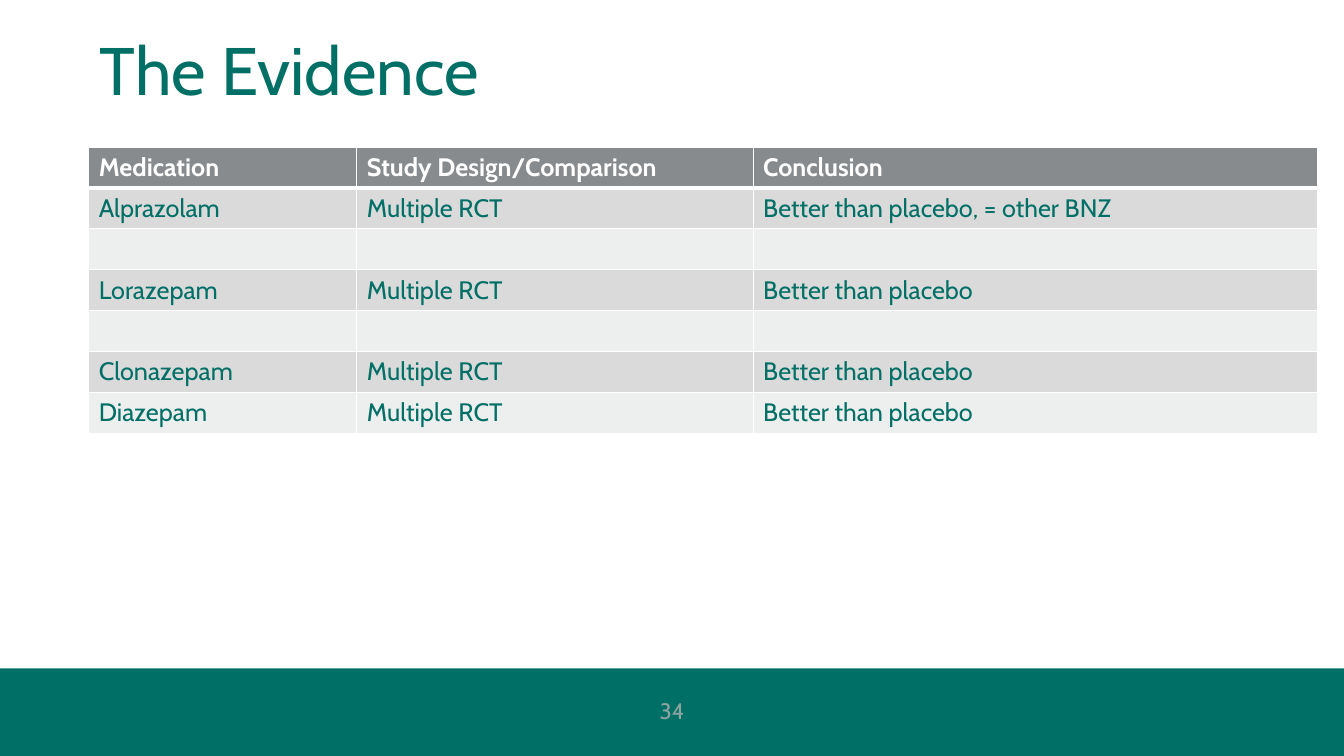
from lxml import etree
from pptx import Presentation
from pptx.dml.color import RGBColor
from pptx.enum.shapes import MSO_SHAPE
from pptx.enum.text import MSO_ANCHOR, PP_ALIGN
from pptx.oxml.ns import qn
from pptx.util import Inches, Pt

FONT = "Cabin"
TEAL = RGBColor(0x00, 0x6F, 0x66)
GRAY_TEAL = RGBColor(0x8C, 0xA4, 0xA0)
HEADER_GRAY = RGBColor(0x88, 0x8B, 0x8D)
DARK_BAND = RGBColor(0xDA, 0xDA, 0xDB)
LIGHT_BAND = RGBColor(0xED, 0xEE, 0xEE)
WHITE = RGBColor(0xFF, 0xFF, 0xFF)

COLUMN_WIDTHS = (2.66, 3.93, 5.6)
EMPTY_ROW = ("", "", "")
EVIDENCE = [
    ("Medication", "Study Design/Comparison", "Conclusion"),
    ("Alprazolam", "Multiple RCT", "Better than placebo, = other BNZ"),
    EMPTY_ROW,
    ("Lorazepam", "Multiple RCT", "Better than placebo"),
    EMPTY_ROW,
    ("Clonazepam", "Multiple RCT", "Better than placebo"),
    ("Diazepam", "Multiple RCT", "Better than placebo"),
]


def write(text_frame, text, size, color, bold=False, align=PP_ALIGN.LEFT):
    text_frame.text = text
    paragraph = text_frame.paragraphs[0]
    paragraph.alignment = align
    for run in paragraph.runs:
        font = run.font
        font.name, font.size, font.bold = FONT, Pt(size), bold
        font.color.rgb = color


def add_title(slide, left, top, width, height):
    title = slide.shapes.title
    title.left, title.top = Inches(left), Inches(top)
    title.width, title.height = Inches(width), Inches(height)
    title.text_frame.vertical_anchor = MSO_ANCHOR.TOP
    write(title.text_frame, "The\u00a0Evidence".replace("\u00a0", " "), 48, TEAL)


def add_footer(slide, left, top, width, height):
    band = slide.shapes.add_shape(
        MSO_SHAPE.RECTANGLE, Inches(left), Inches(top), Inches(width), Inches(height))
    band.shadow.inherit = False
    band.fill.solid()
    band.fill.fore_color.rgb = TEAL
    band.line.fill.background()

    number_width = 3
    number = slide.shapes.add_textbox(
        Inches(left + (width - number_width) / 2), Inches(top + 0.22),
        Inches(number_width), Inches(0.4))
    number.text_frame.word_wrap = True
    number.text_frame.vertical_anchor = MSO_ANCHOR.MIDDLE
    write(number.text_frame, "34", 16, GRAY_TEAL, align=PP_ALIGN.CENTER)


def set_borders(cell, bottom_width):
    """Draw white cell borders, placed before the fill as the schema requires."""
    properties = cell._tc.get_or_add_tcPr()
    widths = {"a:lnL": 1, "a:lnR": 1, "a:lnT": 1, "a:lnB": bottom_width}
    for index, (tag, width) in enumerate(widths.items()):
        line = etree.Element(qn(tag), w=str(Pt(width)))
        fill = etree.SubElement(line, qn("a:solidFill"))
        etree.SubElement(fill, qn("a:srgbClr"), val=str(WHITE))
        properties.insert(index, line)


def add_evidence_table(slide, left, top, width, height):
    table = slide.shapes.add_table(
        len(EVIDENCE), len(COLUMN_WIDTHS), Inches(left), Inches(top),
        Inches(width), Inches(height)).table
    for column, column_width in zip(table.columns, COLUMN_WIDTHS):
        column.width = Inches(column_width)
    for row_index, texts in enumerate(EVIDENCE):
        is_header = row_index == 0
        band_color = DARK_BAND if row_index % 2 else LIGHT_BAND
        for column_index, text in enumerate(texts):
            cell = table.cell(row_index, column_index)
            cell.fill.solid()
            cell.fill.fore_color.rgb = HEADER_GRAY if is_header else band_color
            set_borders(cell, 3 if is_header else 1)
            write(cell.text_frame, text, 18, WHITE if is_header else TEAL, is_header)


def main():
    presentation = Presentation()
    presentation.slide_width = Inches(13.33)
    presentation.slide_height = Inches(7.5)
    slide = presentation.slides.add_slide(presentation.slide_layouts[5])
    add_footer(slide, 0, 6.63, 13.33, 0.87)
    add_title(slide, 0.89, 0.23, 12.16, 0.88)
    add_evidence_table(slide, 0.88, 1.46, sum(COLUMN_WIDTHS), 2.84)
    presentation.save("out.pptx")


if __name__ == "__main__":
    main()
